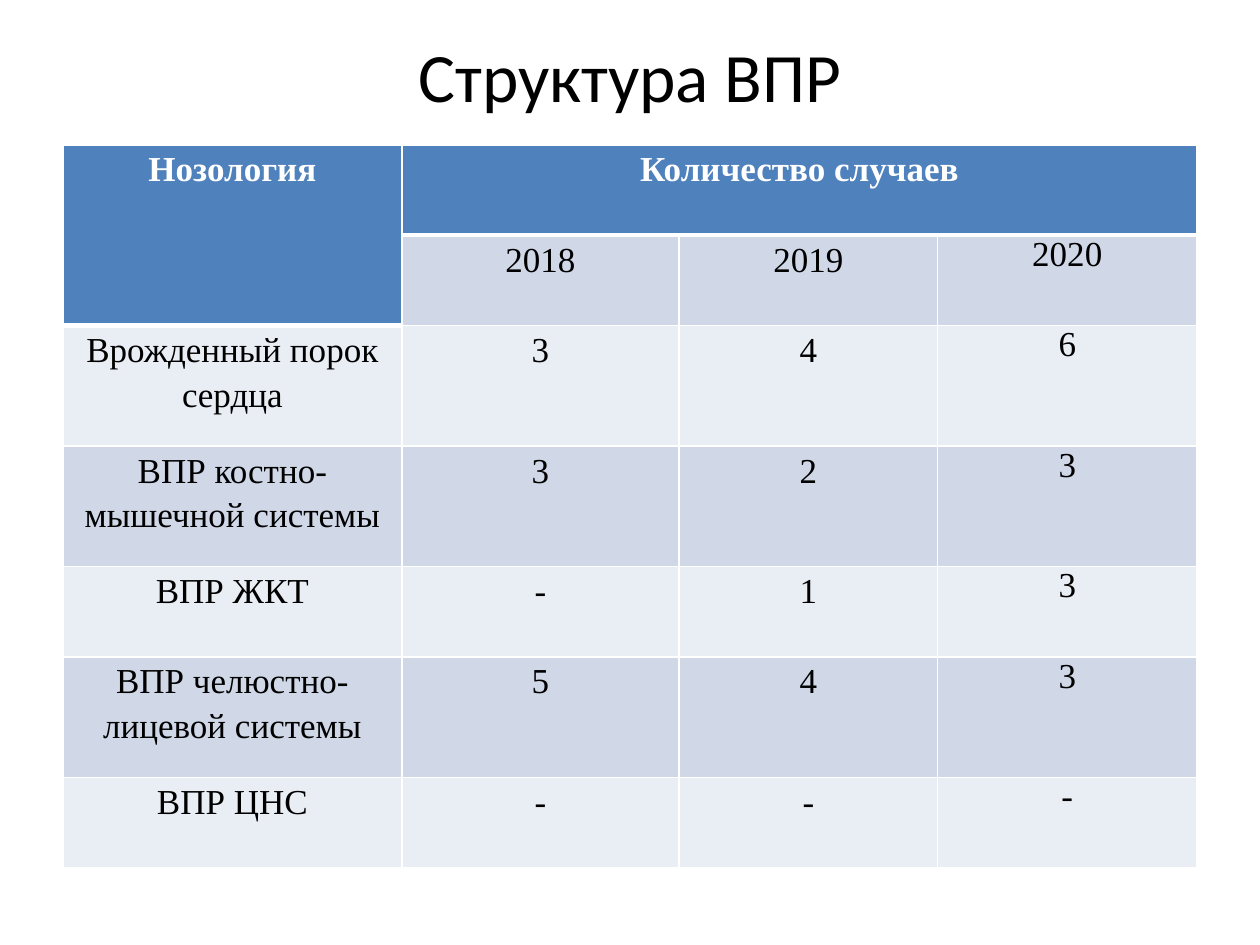
"""Build a slide with a table of congenital malformation cases by year."""
from dataclasses import dataclass

from lxml import etree
from pptx import Presentation
from pptx import util as u
from pptx.dml.color import RGBColor
from pptx.enum import text
from pptx.oxml import ns

WHITE = RGBColor(0xFF, 0xFF, 0xFF)
BLACK = RGBColor(0, 0, 0)
HEADER_BLUE = RGBColor(0x4F, 0x81, 0xBD)
BANDS = (RGBColor(0xE9, 0xED, 0xF4), RGBColor(0xD0, 0xD8, 0xE8))

COLUMN_WIDTHS = (6.83, 5.59, 5.21, 5.23)
SHORT_ROW, TALL_ROW = 1.82, 2.43
CELL_FORMAT = {
    "margin_left": u.Cm(0.18),
    "margin_right": u.Cm(0.18),
    "margin_top": 0,
    "margin_bottom": 0,
    "vertical_anchor": text.MSO_ANCHOR.TOP,
}


@dataclass(frozen=True)
class Row:
    values: tuple[str, ...]
    height: float = SHORT_ROW


ROWS = (
    Row(("Нозология", "Количество случаев", "", "")),
    Row(("", "2018", "2019", "2020")),
    Row(("Врожденный порок сердца", "3", "4", "6"), TALL_ROW),
    Row(("ВПР костно-мышечной системы", "3", "2", "3"), TALL_ROW),
    Row(("ВПР ЖКТ", "-", "1", "3")),
    Row(("ВПР челюстно-лицевой системы", "5", "4", "3"), TALL_ROW),
    Row(("ВПР ЦНС", "-", "-", "-")),
)


def apply_format(target, values: dict) -> None:
    for name, value in values.items():
        setattr(target, name, value)


def set_font(font, name: str, size: float, color: RGBColor, bold: bool) -> None:
    apply_format(font, {"name": name, "size": u.Pt(size), "bold": bold})
    font.color.rgb = color


def add_border(cell, side: str, width: float) -> None:
    properties = cell._tc.get_or_add_tcPr()
    line = etree.SubElement(properties, ns.qn(f"a:ln{side}"), w=str(u.Pt(width)))
    fill = etree.SubElement(line, ns.qn("a:solidFill"))
    etree.SubElement(fill, ns.qn("a:srgbClr"), val=str(WHITE))


def fill_cell(cell, value: str, row: int, column: int) -> None:
    header = row == 0 or (row == 1 and column == 0)
    apply_format(cell, CELL_FORMAT)
    below_header = row == (2 if column == 0 else 1)
    borders = {"L": 1, "R": 1, "T": 3 if below_header else 1, "B": 3 if header else 1}
    for side, width in borders.items():
        add_border(cell, side, width)
    cell.fill.solid()
    cell.fill.fore_color.rgb = HEADER_BLUE if header else BANDS[row % 2]
    if not value:
        return
    paragraph = cell.text_frame.paragraphs[0]
    paragraph.alignment = text.PP_ALIGN.CENTER
    if column < 3:
        paragraph.line_spacing = 1.15
    run = paragraph.add_run()
    run.text = value
    set_font(run.font, "Times New Roman", 20, WHITE if header else BLACK, header)


def add_title(slide, heading: str) -> None:
    title = slide.shapes.title
    apply_format(title, {"left": u.Cm(1.27), "top": u.Cm(0.76),
                         "width": u.Cm(22.86), "height": u.Cm(3.18)})
    frame = title.text_frame
    frame.text = heading
    apply_format(frame, {"margin_top": 0, "margin_bottom": u.Cm(1.7),
                         "vertical_anchor": text.MSO_ANCHOR.MIDDLE,
                         "auto_size": text.MSO_AUTO_SIZE.NONE})
    paragraph = frame.paragraphs[0]
    paragraph.alignment = text.PP_ALIGN.CENTER
    set_font(paragraph.runs[0].font, "Calibri", 39.6, BLACK, False)


def add_cases(slide) -> None:
    height = sum(row.height for row in ROWS)
    cases = slide.shapes.add_table(
        len(ROWS), len(COLUMN_WIDTHS), u.Cm(1.27), u.Cm(2.92),
        u.Cm(sum(COLUMN_WIDTHS)), u.Cm(height)).table
    for column, width in zip(cases.columns, COLUMN_WIDTHS):
        column.width = u.Cm(width)
    for row_index, row in enumerate(ROWS):
        cases.rows[row_index].height = u.Cm(row.height)
        for column_index, value in enumerate(row.values):
            fill_cell(cases.cell(row_index, column_index), value,
                      row_index, column_index)
    cases.cell(0, 0).merge(cases.cell(1, 0))
    cases.cell(0, 1).merge(cases.cell(0, 3))


def main() -> None:
    deck = Presentation()
    apply_format(deck, {"slide_width": u.Cm(25.4), "slide_height": u.Cm(19.05)})
    slide = deck.slides.add_slide(deck.slide_layouts[5])
    add_title(slide, "Структура ВПР")
    add_cases(slide)
    deck.save("out.pptx")


if __name__ == "__main__":
    main()
